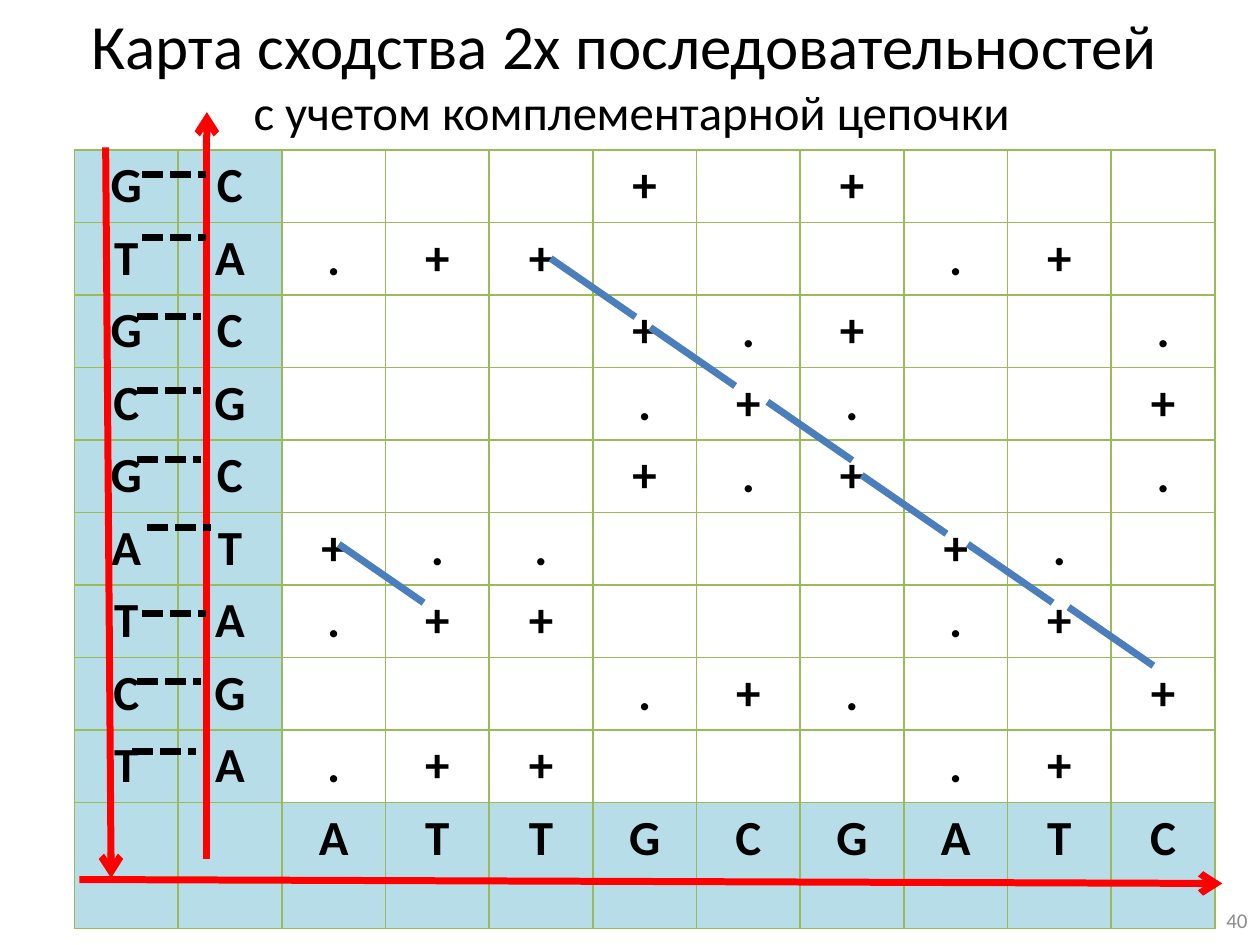
from pptx import Presentation
from pptx.dml.color import RGBColor
from pptx.enum.dml import MSO_LINE
from pptx.enum.shapes import MSO_CONNECTOR
from pptx.enum.text import MSO_ANCHOR, MSO_AUTO_SIZE, PP_ALIGN
from pptx.oxml.ns import qn
from pptx.util import Cm, Pt
from lxml.etree import SubElement

FONT = "Calibri"
BLACK = RGBColor(0x00, 0x00, 0x00)
WHITE = RGBColor(0xFF, 0xFF, 0xFF)
GRAY = RGBColor(0x8C, 0x8C, 0x8C)
RED = RGBColor(0xFF, 0x00, 0x00)
BLUE = RGBColor(0x4B, 0x7E, 0xBC)
GREEN = RGBColor(0x9B, 0xBB, 0x59)
PALE_BLUE = RGBColor(0xB7, 0xDE, 0xE8)

# Content: lengths in centimetres
HEADING = "Карта сходства 2х последовательностей "
SUBHEADING = "с учетом комплементарной цепочки"
PAGE_NUMBER = "40"

# Two strand letters, then the matches; a space is an empty cell
MAP_ROWS = [
    "GC   + +   ",
    "TA.++   .+ ",
    "GC   +.+  .",
    "CG   .+.  +",
    "GC   +.+  .",
    "AT+..   +. ",
    "TA.++   .+ ",
    "CG   .+.  +",
    "TA.++   .+ ",
    "  ATTGCGATC",
]
STRAND_COLUMNS = 2
COLUMN_WIDTH, ROW_HEIGHT, LAST_ROW_HEIGHT = 2.09, 1.45, 2.54

MATCH_STEP = (1.71, 1.18)
MATCH_STARTS = [(11.1, 5.21), (13.11, 6.6), (15.47, 8.1), (17.37, 9.58),
                (19.51, 10.97), (21.54, 12.24), (6.83, 10.97)]
DIRECTIONS = [
    ((1.6, 17.73), (24.64, 17.81)),
    ((4.17, 17.32), (4.17, 2.26)),
    ((2.13, 2.97), (2.24, 17.7)),
]
BOND_LENGTH = 1.28
BOND_STARTS = [(2.87, 3.51), (2.87, 4.78), (2.77, 6.38), (2.77, 7.87),
               (2.77, 9.27), (2.97, 10.64), (2.87, 12.37), (2.77, 13.74),
               (2.67, 15.14)]


def add_run(paragraph, text, size, color=BLACK, bold=False):
    run = paragraph.add_run()
    run.text = text
    run.font.name = FONT
    run.font.size = Pt(size)
    run.font.bold = bold
    run.font.color.rgb = color


def add_borders(cell):
    properties = cell._tc.get_or_add_tcPr()
    for side in ("a:lnL", "a:lnR", "a:lnT", "a:lnB"):
        border = SubElement(properties, qn(side), w=str(Pt(1)))
        fill = SubElement(border, qn("a:solidFill"))
        SubElement(fill, qn("a:srgbClr"), val=str(GREEN))


def add_line(slide, start, end, color, dashed=False, arrow=False):
    line = slide.shapes.add_connector(
        MSO_CONNECTOR.STRAIGHT, *(Cm(value) for value in (*start, *end)))
    line.line.color.rgb = color
    line.line.width = Pt(4)
    if dashed:
        line.line.dash_style = MSO_LINE.SQUARE_DOT
    if arrow:
        SubElement(line.line._get_or_add_ln(), qn("a:tailEnd"), type="arrow")
    SubElement(line._element.spPr, qn("a:effectLst"))


def add_title(slide):
    title = slide.shapes.title
    title.left, title.top = Cm(1.14), Cm(0.36)
    title.width, title.height = Cm(23.19), Cm(2.24)
    frame = title.text_frame
    frame.auto_size = MSO_AUTO_SIZE.NONE
    frame.vertical_anchor = MSO_ANCHOR.MIDDLE
    paragraph = frame.paragraphs[0]
    paragraph.alignment = PP_ALIGN.CENTER
    add_run(paragraph, HEADING, 36)
    paragraph.add_line_break()
    add_run(paragraph, SUBHEADING, 27.9)


def add_map(slide):
    row_count, column_count = len(MAP_ROWS), len(MAP_ROWS[0])
    heights = [ROW_HEIGHT] * (row_count - 1) + [LAST_ROW_HEIGHT]
    similarity_map = slide.shapes.add_table(
        row_count, column_count, Cm(1.5), Cm(3.02),
        Cm(COLUMN_WIDTH * column_count), Cm(sum(heights))).table
    for column in similarity_map.columns:
        column.width = Cm(COLUMN_WIDTH)
    for row, height in zip(similarity_map.rows, heights):
        row.height = Cm(height)

    for r, letters in enumerate(MAP_ROWS):
        for c, letter in enumerate(letters):
            cell = similarity_map.cell(r, c)
            add_borders(cell)
            is_sequence = c < STRAND_COLUMNS or r == row_count - 1
            cell.fill.solid()
            cell.fill.fore_color.rgb = PALE_BLUE if is_sequence else WHITE
            if letter != " ":
                paragraph = cell.text_frame.paragraphs[0]
                paragraph.alignment = PP_ALIGN.CENTER
                add_run(paragraph, letter, 28, bold=True)


def add_page_number(slide):
    box = slide.shapes.add_textbox(Cm(19.48), Cm(18.03), Cm(5.92), Cm(1.02))
    frame = box.text_frame
    frame.word_wrap = True
    frame.vertical_anchor = MSO_ANCHOR.MIDDLE
    frame.paragraphs[0].alignment = PP_ALIGN.RIGHT
    add_run(frame.paragraphs[0], PAGE_NUMBER, 12, GRAY)


def main():
    deck = Presentation()
    deck.slide_width, deck.slide_height = Cm(25.4), Cm(19.05)
    slide = deck.slides.add_slide(deck.slide_layouts[5])

    add_title(slide)
    add_map(slide)
    add_page_number(slide)

    # Matching diagonals
    for x, y in MATCH_STARTS:
        add_line(slide, (x, y), (x + MATCH_STEP[0], y + MATCH_STEP[1]), BLUE)
    # Reading directions
    for start, end in DIRECTIONS:
        add_line(slide, start, end, RED, arrow=True)
    # Bonds between the strands
    for x, y in BOND_STARTS:
        add_line(slide, (x, y), (x + BOND_LENGTH, y), BLACK, dashed=True)

    deck.save("out.pptx")


if __name__ == "__main__":
    main()
